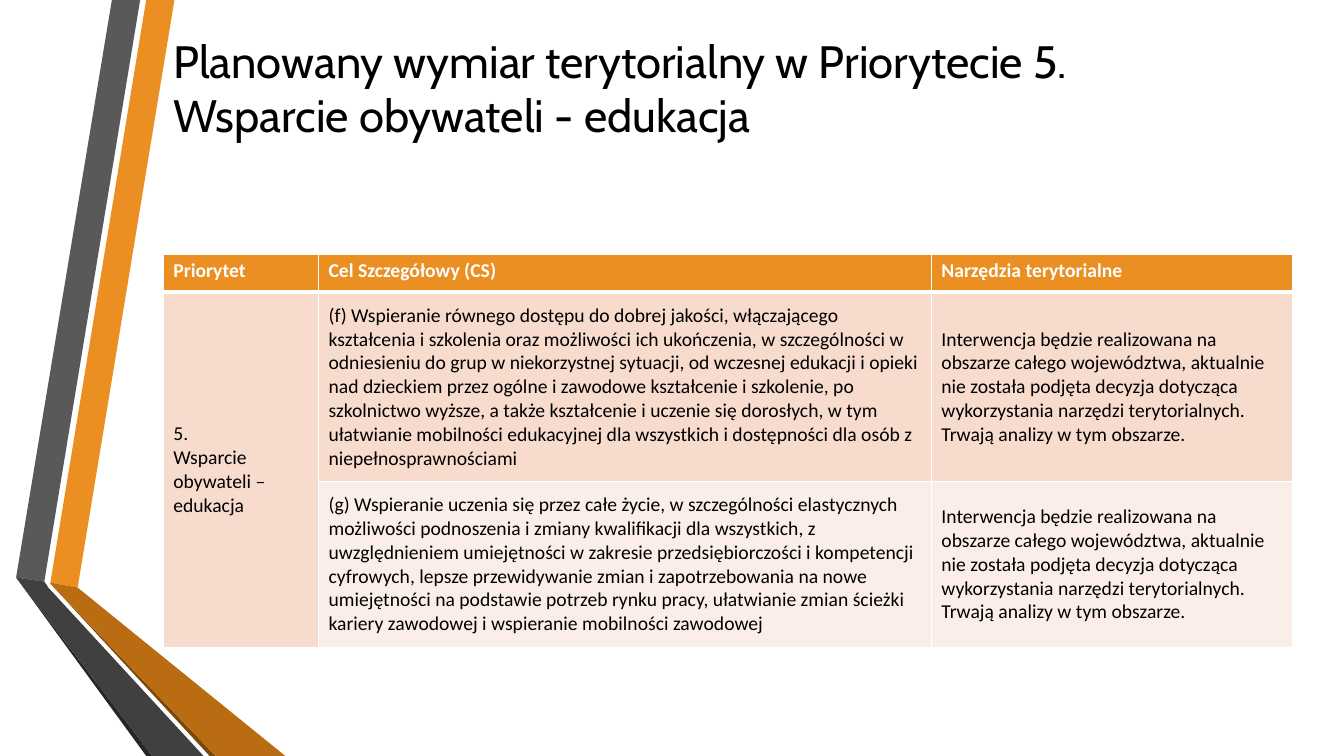
from dataclasses import dataclass

from lxml.etree import SubElement
from pptx import Presentation
from pptx.dml.color import RGBColor
from pptx.enum.text import MSO_ANCHOR as Anchor, MSO_AUTO_SIZE as AutoSize, PP_ALIGN as Align
from pptx.oxml.ns import qn
from pptx.slide import Slide
from pptx.table import _Cell as Cell
from pptx.text.text import _Paragraph as Paragraph
from pptx.util import Emu, Inches, Pt

SLIDE_WIDTH, SLIDE_HEIGHT = Inches(13.333), Inches(7.5)


@dataclass(frozen=True)
class Theme:
    orange: str = "EB8F22"
    orange_fold: str = "B96C11"
    orange_edge: str = "7B480B"
    grey: str = "595959"
    grey_fold: str = "404040"
    grey_edge: str = "262626"
    band_dark: str = "F7DBCD"
    band_light: str = "FBEEE8"
    ink: str = "000000"
    paper: str = "FFFFFF"
    heading_font: str = "Cabin"
    body_font: str = "Calibri"
    heading_size: float = 32.4
    body_size: float = 14


@dataclass(frozen=True)
class Ribbon:
    color: str
    corners: tuple[tuple[float, float], ...]


@dataclass(frozen=True)
class Row:
    height: float
    fill: str
    texts: tuple[str, ...]
    ink: str = Theme.ink
    bold: bool = False
    anchor: Anchor = Anchor.MIDDLE
    rule: float = 1


THEME = Theme()

RIBBONS = (
    Ribbon(THEME.orange, ((3.75, 77.07), (5.78, 77.73), (12.98, 0), (10.88, 0))),
    Ribbon(THEME.grey, ((10.43, 0), (8.33, 0), (1.2, 76.4), (3.3, 76.93))),
    Ribbon(THEME.grey_edge, ((1.2, 76.4), (10.88, 100), (11.33, 100))),
    Ribbon(THEME.orange_edge, ((3.75, 77.2), (15.6, 100), (16.05, 100))),
    Ribbon(THEME.orange_fold,
           ((3.75, 77.07), (3.75, 77.2), (16.05, 100), (21.23, 100), (5.78, 77.73))),
    Ribbon(THEME.grey_fold,
           ((15.15, 100), (3.6, 77.73), (3.3, 76.93), (1.2, 76.4), (11.33, 100))),
)

HEADING = "Planowany wymiar terytorialny w Priorytecie 5.\vWsparcie obywateli - edukacja"
PRIORITY = "5.\nWsparcie obywateli – edukacja"
TOOLS = (
    "Interwencja będzie realizowana na obszarze całego województwa, aktualnie nie została "
    "podjęta decyzja dotycząca wykorzystania narzędzi terytorialnych.\n"
    "Trwają analizy w tym obszarze."
)
GOAL_F = (
    "(f) Wspieranie równego dostępu do dobrej jakości, włączającego kształcenia i szkolenia "
    "oraz możliwości ich ukończenia, w szczególności w odniesieniu do grup w niekorzystnej "
    "sytuacji, od wczesnej edukacji i opieki nad dzieckiem przez ogólne i zawodowe kształcenie "
    "i szkolenie, po szkolnictwo wyższe, a także kształcenie i uczenie się dorosłych, w tym "
    "ułatwianie mobilności edukacyjnej dla wszystkich i dostępności dla osób z "
    "niepełnosprawnościami"
)
GOAL_G = (
    "(g) Wspieranie uczenia się przez całe życie, w szczególności elastycznych możliwości "
    "podnoszenia i zmiany kwalifikacji dla wszystkich, z uwzględnieniem umiejętności w zakresie "
    "przedsiębiorczości i kompetencji cyfrowych, lepsze przewidywanie zmian i zapotrzebowania "
    "na nowe umiejętności na podstawie potrzeb rynku pracy, ułatwianie zmian ścieżki kariery "
    "zawodowej i wspieranie mobilności zawodowej"
)

LEFT_EDGE = 12.15
TABLE_TOP = 33.6
COLUMN_WIDTHS = (11.55, 45.6, 26.85)
ROWS = (
    Row(5.07, THEME.orange, ("Priorytet", "Cel Szczegółowy (CS)", "Narzędzia terytorialne"),
        THEME.paper, True, Anchor.TOP, 3),
    Row(25.07, THEME.band_dark, (PRIORITY, GOAL_F, TOOLS)),
    Row(21.87, THEME.band_light, ("", GOAL_G, TOOLS)),
)


def across(percent: float) -> Emu:
    return Emu(round(SLIDE_WIDTH * percent / 100))


def down(percent: float) -> Emu:
    return Emu(round(SLIDE_HEIGHT * percent / 100))


def style(paragraph: Paragraph, family: str, size: float, color: str, bold: bool = False) -> None:
    paragraph.alignment = Align.LEFT
    font = paragraph.font
    font.name, font.size, font.bold = family, Pt(size), bold
    font.color.rgb = RGBColor.from_string(color)


def draw_ribbon(slide: Slide, ribbon: Ribbon) -> None:
    start, *rest = [(across(x), down(y)) for x, y in ribbon.corners]
    builder = slide.shapes.build_freeform(*start)
    builder.add_line_segments(rest, close=True)
    band = builder.convert_to_shape()
    band.shadow.inherit = False
    band.fill.solid()
    band.fill.fore_color.rgb = RGBColor.from_string(ribbon.color)
    band.line.fill.background()


def place_heading(slide: Slide) -> None:
    heading = slide.shapes.title
    heading.left, heading.top = across(LEFT_EDGE), down(2.93)
    heading.width, heading.height = across(85.35), down(17.2)
    frame = heading.text_frame
    frame.text = HEADING
    frame.word_wrap = True
    frame.auto_size = AutoSize.NONE
    frame.vertical_anchor = Anchor.MIDDLE
    style(frame.paragraphs[0], THEME.heading_font, THEME.heading_size, THEME.ink)


def set_borders(cell: Cell, top: float, bottom: float) -> None:
    properties = cell._tc.get_or_add_tcPr()
    widths = {"a:lnL": 1, "a:lnR": 1, "a:lnT": top, "a:lnB": bottom}
    for side, width in widths.items():
        line = SubElement(properties, qn(side), w=str(Pt(width)))
        solid = SubElement(line, qn("a:solidFill"))
        SubElement(solid, qn("a:srgbClr"), val=THEME.paper)


def fill_cell(cell: Cell, text: str, row: Row, top_rule: float) -> None:
    set_borders(cell, top_rule, row.rule)
    cell.fill.solid()
    cell.fill.fore_color.rgb = RGBColor.from_string(row.fill)
    cell.vertical_anchor = row.anchor
    cell.text = text
    for paragraph in cell.text_frame.paragraphs:
        style(paragraph, THEME.body_font, THEME.body_size, row.ink, row.bold)


def draw_table(slide: Slide) -> None:
    table = slide.shapes.add_table(
        len(ROWS), len(COLUMN_WIDTHS), across(LEFT_EDGE), down(TABLE_TOP),
        across(sum(COLUMN_WIDTHS)), down(sum(row.height for row in ROWS)),
    ).table
    for column, width in zip(table.columns, COLUMN_WIDTHS):
        column.width = across(width)
    top_rule = 1
    for index, row in enumerate(ROWS):
        table.rows[index].height = down(row.height)
        for cell, text in zip(table.rows[index].cells, row.texts):
            fill_cell(cell, text, row, top_rule)
        top_rule = row.rule
    table.cell(1, 0).merge(table.cell(2, 0))


def main() -> None:
    deck = Presentation()
    deck.slide_width, deck.slide_height = SLIDE_WIDTH, SLIDE_HEIGHT
    slide = deck.slides.add_slide(deck.slide_layouts[5])
    for ribbon in RIBBONS:
        draw_ribbon(slide, ribbon)
    place_heading(slide)
    draw_table(slide)
    deck.save("out.pptx")


if __name__ == "__main__":
    main()
